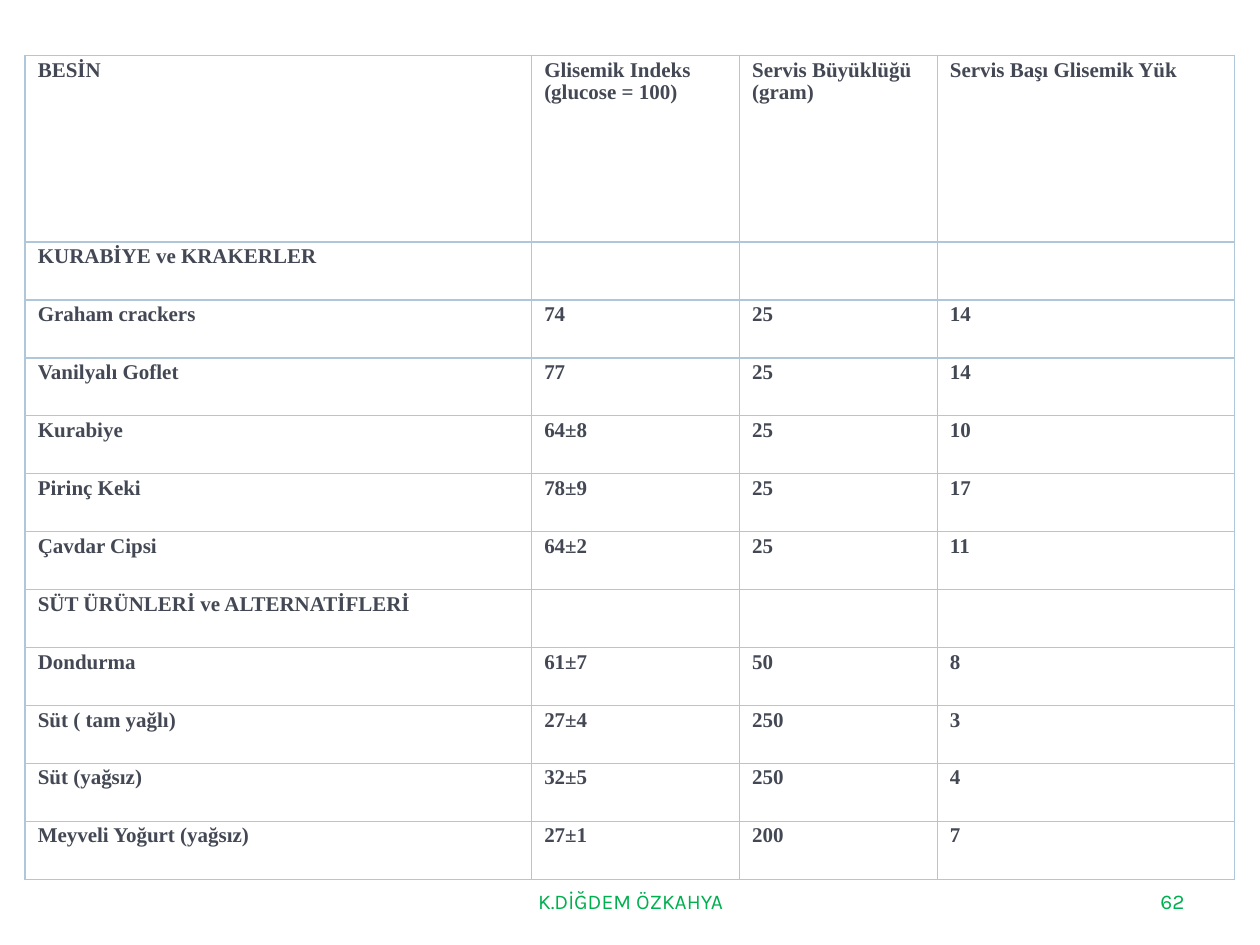
from pptx import Presentation
from pptx.dml.color import RGBColor
from pptx.enum.text import MSO_ANCHOR, PP_ALIGN
from pptx.oxml import parse_xml
from pptx.oxml.ns import nsdecls
from pptx.util import Inches, Pt

WIDTHS = [4.02, 1.65, 1.57, 2.36]
HEIGHTS = [1.48] + [0.46] * 11
FOODS = [
    ("BESİN", "Glisemik Indeks\v(glucose = 100)", "Servis Büyüklüğü (gram)", "Servis Başı Glisemik Yük"),
    ("KURABİYE ve KRAKERLER", "", "", ""),
    ("Graham crackers", "74", "25", "14"),
    ("Vanilyalı Goflet", "77", "25", "14"),
    ("Kurabiye", "64±8", "25", "10"),
    ("Pirinç Keki", "78±9", "25", "17"),
    ("Çavdar Cipsi", "64±2", "25", "11"),
    ("SÜT ÜRÜNLERİ ve ALTERNATİFLERİ", "", "", ""),
    ("Dondurma", "61±7", "50", "8"),
    ("Süt ( tam yağlı)", "27±4", "250", "3"),
    ("Süt (yağsız)", "32±5", "250", "4"),
    ("Meyveli Yoğurt (yağsız)", "27±1", "200", "7"),
]


def color(code):
    return RGBColor.from_string(code)


class Page:
    """Holds the style and the current slide."""

    ink, line, paper, accent = "434854", "B0C6D9", "FFFFFF", "00B050"
    body, foot = "Times New Roman", "Karla"
    size = Pt(12)

    def __init__(self, slide):
        self.slide = slide

    def style(self, para, face, code, bold=False):
        for run in para.runs:
            font = run.font
            font.name, font.size, font.bold = face, self.size, bold
            font.color.rgb = color(code)

    def label(self, text, left, top, width, height, align):
        box = self.slide.shapes.add_textbox(Inches(left), Inches(top), Inches(width), Inches(height))
        frame = box.text_frame
        frame.word_wrap = True
        frame.vertical_anchor = MSO_ANCHOR.MIDDLE
        frame.text = text
        para = frame.paragraphs[0]
        para.alignment = align
        self.style(para, self.foot, self.accent)

    def border(self, cell):
        props = cell._tc.get_or_add_tcPr()
        for side in ("lnL", "lnR", "lnT", "lnB"):
            props.append(parse_xml(
                f'<a:{side} {nsdecls("a")} w="{Pt(1)}"><a:solidFill>'
                f'<a:srgbClr val="{self.line}"/></a:solidFill></a:{side}>'))

    def cell(self, cell, text):
        cell.margin_left = cell.margin_right = Inches(0.1)
        cell.margin_top = cell.margin_bottom = Inches(0.03)
        self.border(cell)
        cell.fill.solid()
        cell.fill.fore_color.rgb = color(self.paper)
        cell.text_frame.text = text
        para = cell.text_frame.paragraphs[0]
        para.line_spacing = Pt(12.8)
        self.style(para, self.body, self.ink, True)

    def table(self, data, left, top, widths, heights):
        table = self.slide.shapes.add_table(
            len(data), len(widths), Inches(left), Inches(top),
            Inches(sum(widths)), Inches(sum(heights))).table
        table.first_row = table.horz_banding = False
        for col, width in zip(table.columns, widths):
            col.width = Inches(width)
        for row, height, texts in zip(table.rows, heights, data):
            row.height = Inches(height)
            for cell, text in zip(row.cells, texts):
                self.cell(cell, text)


def main():
    deck = Presentation()
    deck.slide_width, deck.slide_height = Inches(10), Inches(7.5)
    page = Page(deck.slides.add_slide(deck.slide_layouts[6]))
    page.label("K.DİĞDEM ÖZKAHYA", 3.42, 6.95, 3.17, 0.4, PP_ALIGN.CENTER)
    page.label("62", 7.17, 6.95, 2.33, 0.4, PP_ALIGN.RIGHT)
    page.table(FOODS, 0.2, 0.44, WIDTHS, HEIGHTS)
    deck.save("out.pptx")


if __name__ == "__main__":
    main()
